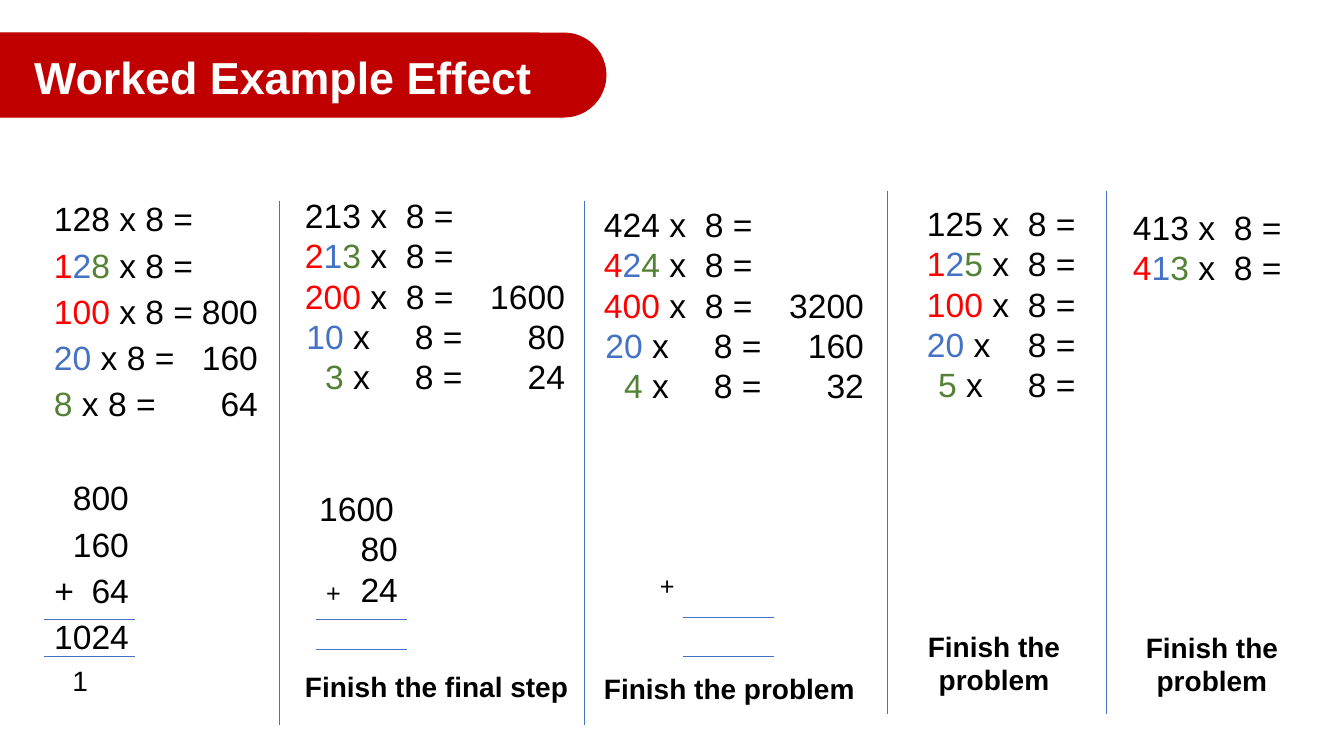
from lxml import etree
from pptx import Presentation
from pptx.dml.color import RGBColor
from pptx.enum.shapes import MSO_CONNECTOR, MSO_SHAPE
from pptx.enum.text import MSO_ANCHOR, MSO_AUTO_SIZE, PP_ALIGN
from pptx.oxml.ns import qn
from pptx.util import Pt

LEFT, CENTER = PP_ALIGN.LEFT, PP_ALIGN.CENTER
MIDDLE, TOP = MSO_ANCHOR.MIDDLE, MSO_ANCHOR.TOP
NO_FIT = MSO_AUTO_SIZE.NONE
ROUND_RECT = MSO_SHAPE.ROUNDED_RECTANGLE
STRAIGHT = MSO_CONNECTOR.STRAIGHT

FONT = "Arial"
BLACK, WHITE, BLUE, CRIMSON = "000000", "FFFFFF", "4472C4", "C00000"
DIGIT_COLORS = ("FF0000", BLUE, "548235")
FACTOR = 8
NUMBER_END = 56
LOOSE = {"line": 0.8, "before": 10}


def px(n):
    """Turn slide pixels into EMU."""
    return round(n * 914400 / 100.8)


def rgb(value):
    """Turn a hex string into a colour."""
    return RGBColor.from_string(value)


def add_run(p, text, size=24, color=BLACK, bold=False):
    """Append formatted text to a paragraph."""
    r = p.add_run()
    r.text = text
    r.font.name, r.font.size, r.font.bold = FONT, Pt(size), bold
    r.font.color.rgb = rgb(color)


def set_frame(tf, anchor=TOP):
    """Give a text frame no insets, wrapping and a fixed size."""
    tf.margin_left = tf.margin_right = tf.margin_top = tf.margin_bottom = 0
    tf.word_wrap = True
    tf.auto_size = NO_FIT
    tf.vertical_anchor = anchor


def add_box(s, x, y, w, h):
    """Add a plain text box and return its text frame."""
    tf = s.shapes.add_textbox(px(x), px(y), px(w), px(h)).text_frame
    set_frame(tf)
    return tf


def next_paragraph(tf, first, line=1.0, before=0):
    """Return a spaced paragraph, reusing the one a frame starts with."""
    p = tf.paragraphs[0] if first else tf.add_paragraph()
    p.alignment = LEFT
    p.line_spacing = line
    p.space_before = Pt(0 if first else before)
    return p


def set_tabs(p, *stops):
    """Set tab stops given as (position, alignment) pairs."""
    tabs = etree.SubElement(p._p.get_or_add_pPr(), qn("a:tabLst"))
    for pos, algn in stops:
        etree.SubElement(tabs, qn("a:tab"), pos=str(px(pos)), algn=algn)


def add_line(s, x1, y1, x2, y2):
    """Draw a thin blue line."""
    line = s.shapes.add_connector(STRAIGHT, px(x1), px(y1), px(x2), px(y2))
    line.line.color.rgb = rgb(BLUE)
    line.line.width = Pt(0.5)
    etree.SubElement(line._element.spPr, qn("a:effectLst"))


def add_title(s, text, x, y, w, h):
    """Place the title on a rounded banner that bleeds off the left edge."""
    banner = s.shapes.add_shape(ROUND_RECT, px(x), px(y), px(w), px(h))
    banner.adjustments[0] = 0.5
    banner.shadow.inherit = False
    banner.fill.solid()
    banner.fill.fore_color.rgb = rgb(CRIMSON)
    banner.line.color.rgb = rgb(CRIMSON)
    title = s.shapes.title
    title._element.addprevious(banner._element)
    title.left, title.top = px(x + 82), px(y + 2)
    title.width, title.height = px(w - 124), px(h)
    set_frame(title.text_frame, MIDDLE)
    p = title.text_frame.paragraphs[0]
    p.alignment = LEFT
    add_run(p, text, size=32, color=WHITE, bold=True)


def add_equations(s, x, y, w, h, number, times="x\t8 =", short_end=NUMBER_END,
                  split=True, product_end=None, spacing=None):
    """Write a product, then its digits in colour, then its partial products."""
    digits = str(number)
    rows = [([(digits, BLACK)], None), (list(zip(digits, DIGIT_COLORS)), None)]
    if split:
        for i, (digit, color) in enumerate(zip(digits, DIGIT_COLORS)):
            part = int(digit) * 10 ** (len(digits) - 1 - i)
            rows.append(([(str(part), color)], part * FACTOR))
    tf = add_box(s, x, y, w, h)
    for i, (pieces, product) in enumerate(rows):
        p = next_paragraph(tf, i == 0, **(spacing or {}))
        short = sum(len(text) for text, _ in pieces) < len(digits)
        end = short_end if short else NUMBER_END
        stops = [(end, "r")] if short else []
        if "\t" in times:
            stops.append((end + 45, "l"))
        if product_end:
            stops.append((product_end, "r"))
        set_tabs(p, *stops)
        for j, (text, color) in enumerate(pieces):
            add_run(p, "\t" + text if short and j == 0 else text, color=color)
        shown = f"\t{product}" if product and product_end else ""
        add_run(p, f" {times}{shown}")


def add_sum(s, x, y, w, h, rows, sign_end=20, sign_size=24, spacing=None):
    """Write a column sum from (sign, value, right edge, size) rows."""
    tf = add_box(s, x, y, w, h)
    for i, (sign, value, end, size) in enumerate(rows):
        p = next_paragraph(tf, i == 0, **(spacing or {}))
        if sign:
            set_tabs(p, (sign_end, "r"), (end, "r"))
            add_run(p, f"\t{sign}", size=sign_size)
        else:
            set_tabs(p, (end, "r"))
        add_run(p, f"\t{value}", size=size)


def add_label(s, text, x, y, w, h, align=LEFT, size=20, bold=True):
    """Write a short instruction or sign."""
    p = next_paragraph(add_box(s, x, y, w, h), True)
    p.alignment = align
    add_run(p, text, size=size, bold=bold)


def add_rules(s):
    """Draw the column dividers and the answer lines under the sums."""
    for x, top, bottom in ((279, 201, 725), (584, 201, 725),
                           (887, 191, 714), (1106, 191, 714)):
        add_line(s, x, top, x, bottom)
    for x, *heights in ((44, 619, 656), (316, 619, 649), (683, 617, 656)):
        for y in heights:
            add_line(s, x, y, x + 91, y)


def main():
    """Build the worked example slide."""
    prs = Presentation()
    prs.slide_width, prs.slide_height = px(1344), px(756)
    s = prs.slides.add_slide(prs.slide_layouts[5])
    add_title(s, "Worked Example Effect", -48, 33, 654, 84)
    add_rules(s)

    add_equations(s, 54, 206, 220, 220, 128, times="x 8 =",
                  product_end=204, spacing=LOOSE)
    add_equations(s, 305, 195, 275, 202, 213, short_end=65, product_end=260)
    add_equations(s, 604, 204, 275, 202, 424, short_end=65, product_end=260)
    add_equations(s, 927, 203, 160, 202, 125)
    add_equations(s, 1133, 207, 175, 81, 413, split=False)

    add_sum(s, 54, 485, 100, 225,
            [("", "800", 75, 24), ("", "160", 75, 24), ("+", "64", 75, 24),
             ("", "1024", 75, 24), ("", "1", 34, 20)], spacing=LOOSE)
    add_sum(s, 319, 488, 100, 121,
            [("", "1600", 75, 24), ("", "80", 79, 24), ("+", "24", 79, 24)],
            sign_end=22, sign_size=18)
    add_label(s, "+", 660, 570, 30, 30, size=18, bold=False)

    add_label(s, "Finish the final step", 305, 669, 275, 34)
    add_label(s, "Finish the problem", 604, 671, 275, 34)
    add_label(s, "Finish the problem", 912, 629, 164, 68, align=CENTER)
    add_label(s, "Finish the problem", 1133, 630, 158, 68, align=CENTER)
    prs.save("out.pptx")


if __name__ == "__main__":
    main()
